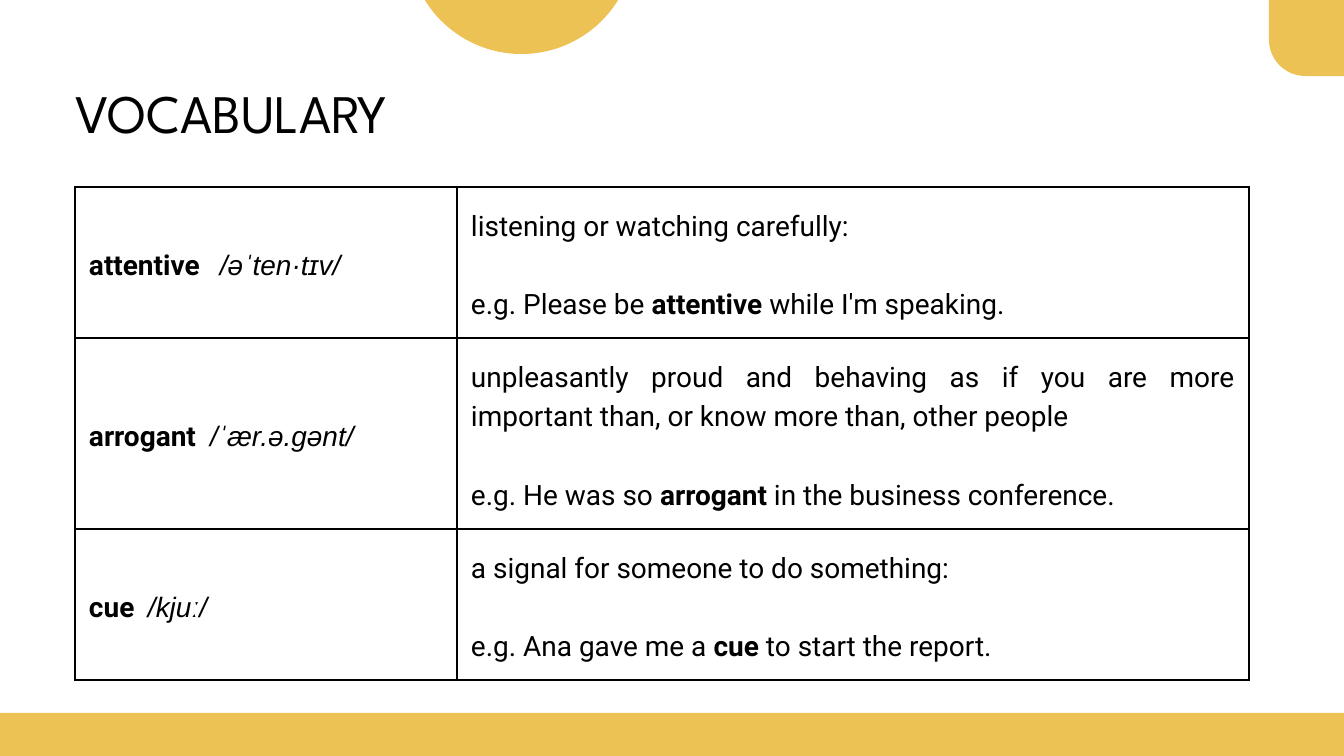
import pptx
import pptx.dml.color
import pptx.enum.shapes
import pptx.enum.text
import pptx.oxml
import pptx.oxml.ns
import pptx.util

SCALE = 914400 / 67.2  # EMU in one px
GOLD = pptx.dml.color.RGBColor(0xED, 0xC2, 0x54)
BLACK = pptx.dml.color.RGBColor(0, 0, 0)
SHAPES = pptx.enum.shapes.MSO_SHAPE
ALIGN = pptx.enum.text.PP_ALIGN
Pt = pptx.util.Pt

PLAIN = {"name": "Roboto", "size": Pt(30), "bold": False, "italic": False}
BOLD = {**PLAIN, "bold": True}
SOUND = {**PLAIN, "name": "Arial", "italic": True}
TITLE = {**PLAIN, "name": "League Spartan", "size": Pt(58.1)}

LEAD = {"line_spacing": Pt(42)}
SENSE = {**LEAD, "alignment": ALIGN.JUSTIFY}
SAMPLE = {**SENSE, "space_before": Pt(42)}

INSET = 14
COLS = (382, 792)
# word, sound, tab px, meaning, example before and after the word, row height
WORDS = (
    ("attentive", "/əˈten·tɪv/", 131, "listening or watching carefully:",
     "e.g. Please be ", " while I'm speaking.", 151),
    ("arrogant", "/ˈær.ə.ɡənt/", 121,
     "unpleasantly proud and behaving as if you are more important than, "
     "or know more than, other people",
     "e.g. He was so ", " in the business conference.", 191),
    ("cue", "/kjuː/", 59, "a signal for someone to do something:",
     "e.g. Ana gave me a ", " to start the report.", 151),
)


def px(*sizes):
    return [pptx.util.Emu(round(size * SCALE)) for size in sizes]


def style(item, form):
    for key, value in form.items():
        setattr(item, key, value)


def write(para, form, *runs):
    style(para, form)
    for text, face in runs:
        run = para.add_run()
        run.text = text
        style(run.font, face)
        run.font.color.rgb = BLACK


def add_shape(slide, kind, box, curve=None):
    shape = slide.shapes.add_shape(kind, *px(*box))
    shape.shadow.inherit = False
    shape.fill.solid()
    shape.fill.fore_color.rgb = GOLD
    shape.line.fill.background()
    if curve is not None:
        shape.adjustments[0] = curve


def add_title(slide, text, box):
    frame = slide.shapes.add_textbox(*px(*box)).text_frame
    style(frame, {"margin_left": 0, "margin_right": 0, "margin_top": 0,
                  "margin_bottom": 0, "word_wrap": True,
                  "auto_size": pptx.enum.text.MSO_AUTO_SIZE.SHAPE_TO_FIT_TEXT})
    write(frame.paragraphs[0], {"line_spacing": Pt(81.4)}, (text, TITLE))


def set_tab(para, place):
    props = para._p.get_or_add_pPr()
    props.append(pptx.oxml.parse_xml(
        f'<a:tabLst {pptx.oxml.ns.nsdecls("a")}>'
        f'<a:tab pos="{px(place)[0]}" algn="l"/></a:tabLst>'))


def format_cell(cell):
    inset = px(INSET)[0]
    style(cell, {"margin_left": inset, "margin_right": inset,
                 "margin_top": inset, "margin_bottom": inset,
                 "vertical_anchor": pptx.enum.text.MSO_ANCHOR.MIDDLE})
    props = cell._tc.get_or_add_tcPr()
    for side in "LRTB":
        props.append(pptx.oxml.parse_xml(
            f'<a:ln{side} {pptx.oxml.ns.nsdecls("a")} w="{Pt(3)}">'
            f'<a:solidFill><a:srgbClr val="{BLACK}"/></a:solidFill></a:ln{side}>'))
    cell.fill.background()


def add_words(slide, left, top):
    high = sum(entry[-1] for entry in WORDS)
    table = slide.shapes.add_table(
        len(WORDS), len(COLS), *px(left, top, sum(COLS), high)).table
    style(table, {"first_row": False, "horz_banding": False})
    for col, width in zip(table.columns, px(*COLS)):
        col.width = width
    for row, entry in zip(table.rows, WORDS):
        word, sound, place, sense, start, end, height = entry
        row.height = px(height)[0]
        for cell in row.cells:
            format_cell(cell)
        term, note = (cell.text_frame for cell in row.cells)
        write(term.paragraphs[0], LEAD, (word + "\t", BOLD), (sound, SOUND))
        set_tab(term.paragraphs[0], place)
        write(note.paragraphs[0], SENSE, (sense, PLAIN))
        write(note.add_paragraph(), SAMPLE,
              (start, PLAIN), (word, BOLD), (end, PLAIN))


def main():
    deck = pptx.Presentation()
    deck.slide_width, deck.slide_height = px(1344, 756)
    slide = deck.slides.add_slide(deck.slide_layouts[6])

    # Gold trim
    add_shape(slide, SHAPES.ROUNDED_RECTANGLE, (1269, -151, 227, 227), 0.16)
    add_shape(slide, SHAPES.RECTANGLE, (-3, 713, 1423, 77))
    add_shape(slide, SHAPES.OVAL, (408, -173, 227, 227))

    # Word list and heading
    add_words(slide, 75, 187)
    add_title(slide, "VOCABULARY", (75, 68, 559, 72))

    deck.save("out.pptx")


if __name__ == "__main__":
    main()
